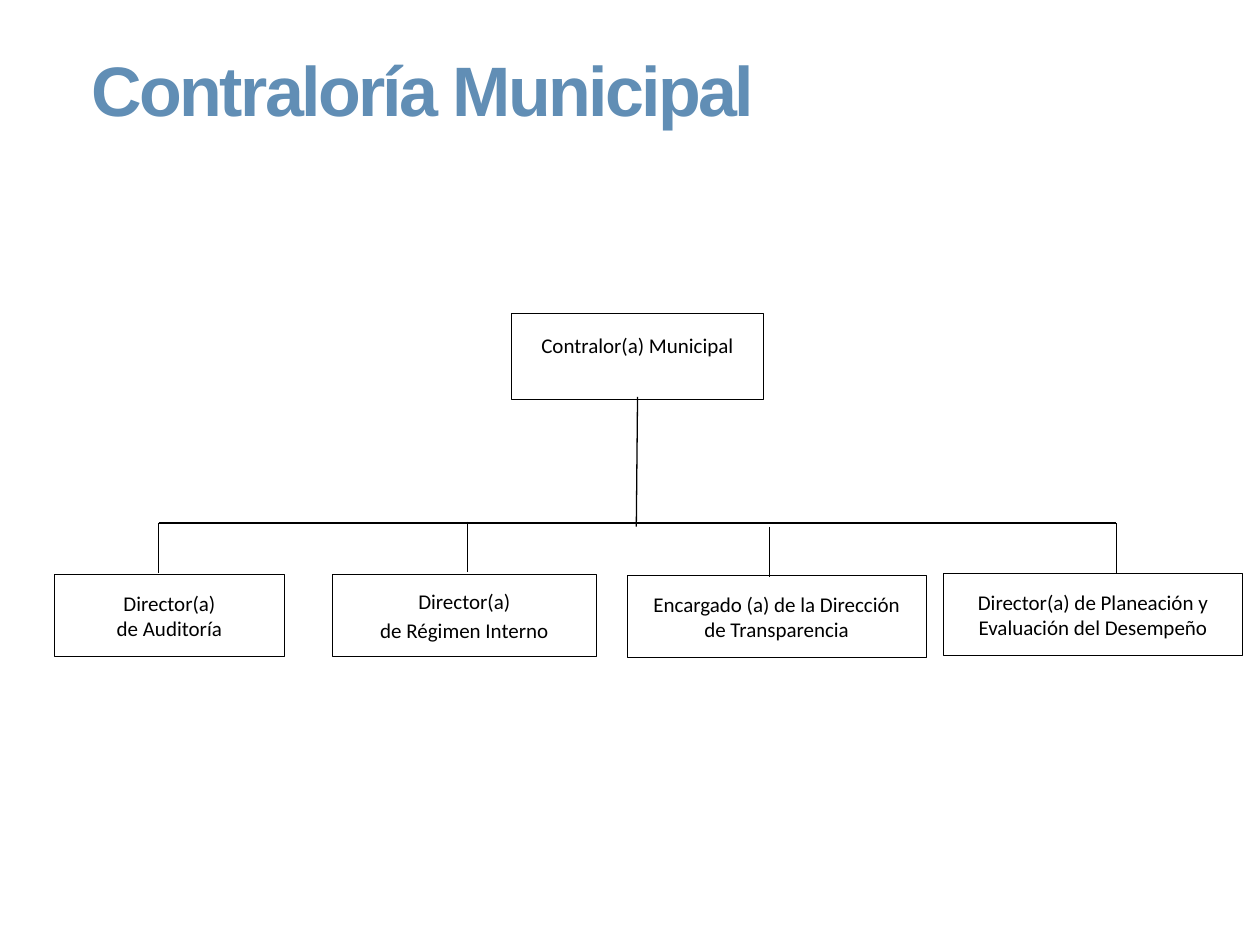
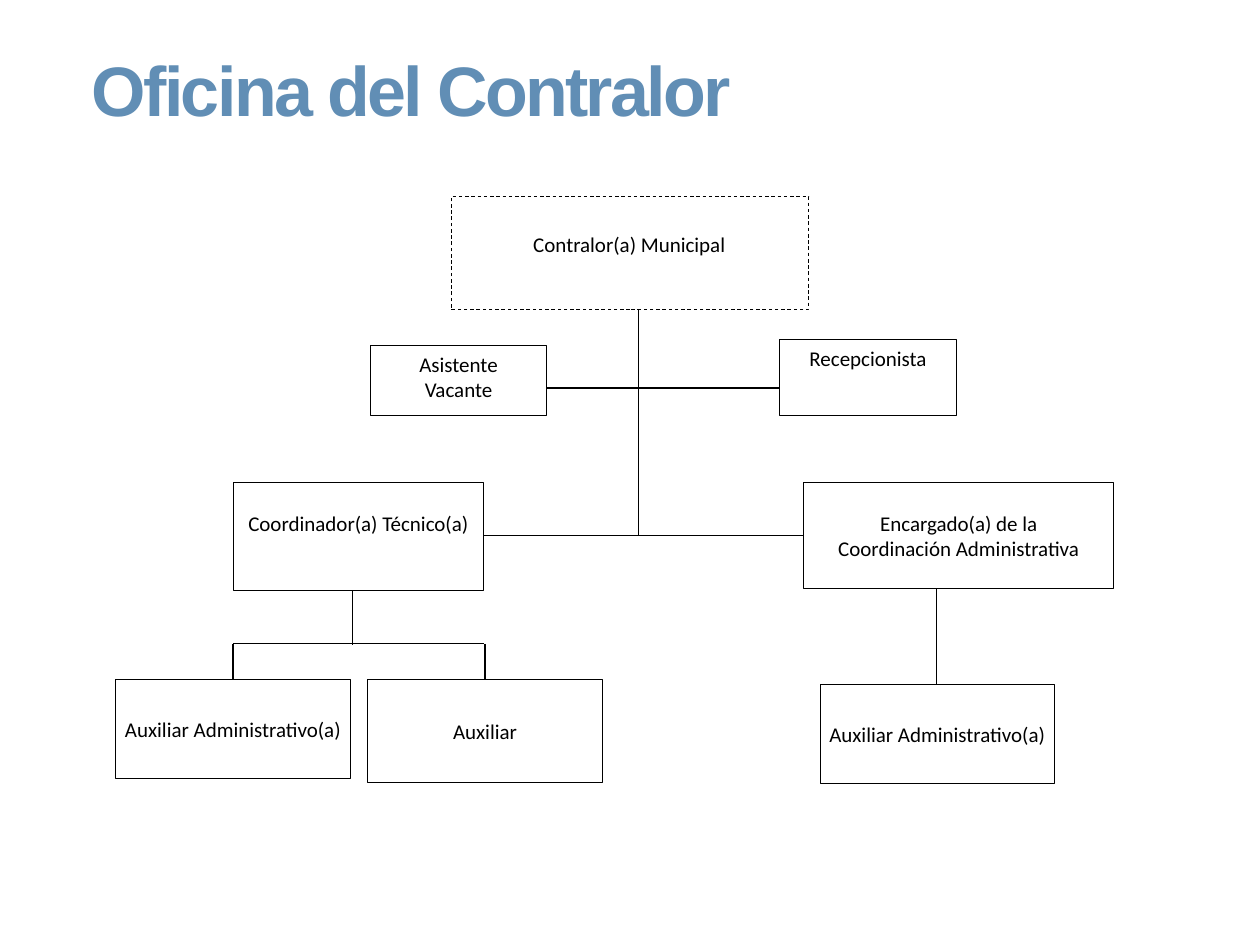
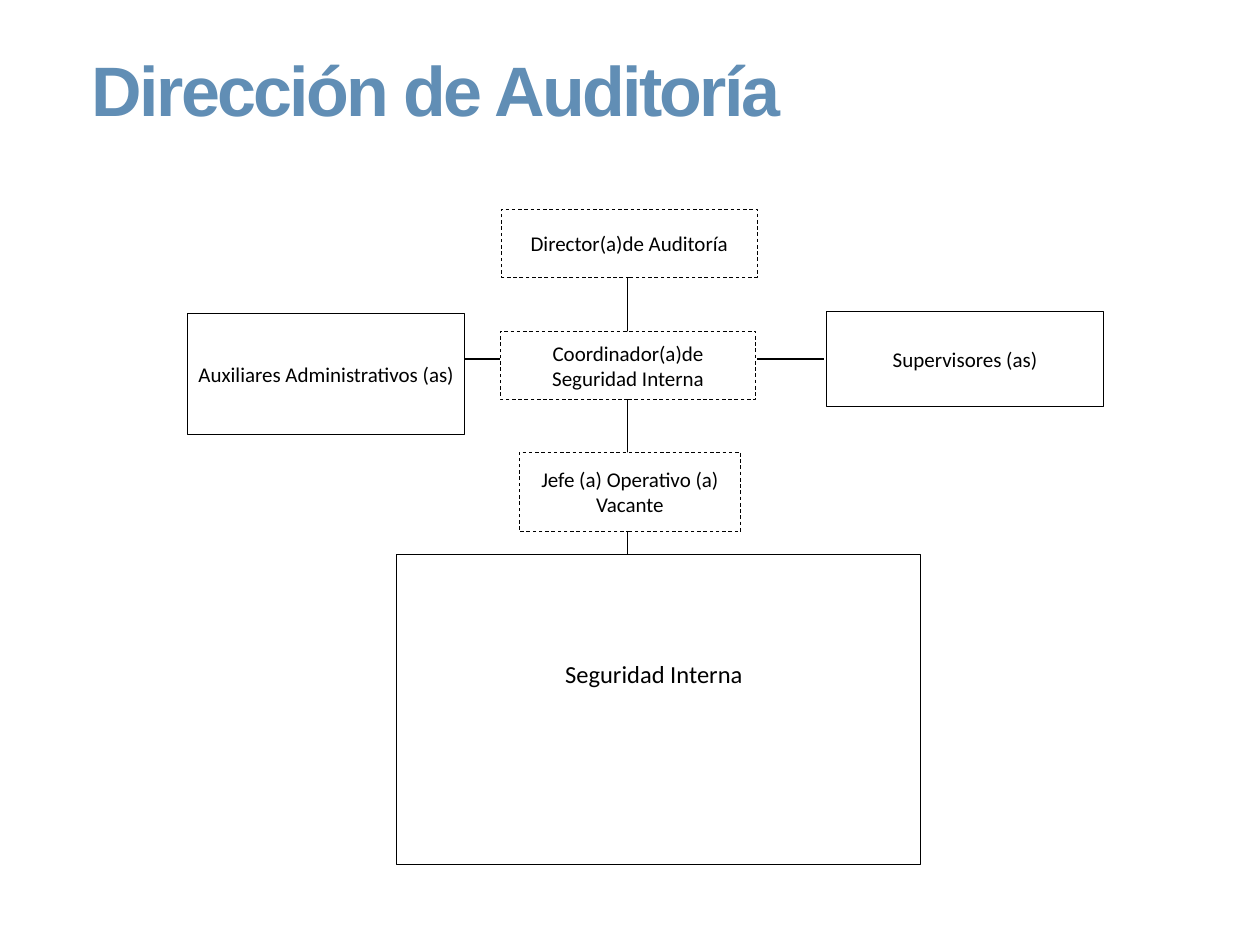
import dataclasses

import lxml.etree
import pptx
import pptx.dml.color
import pptx.enum.dml
import pptx.enum.shapes
import pptx.enum.text
import pptx.oxml.ns
import pptx.util

Inches = pptx.util.Inches
Pt = pptx.util.Pt
Anchor = pptx.enum.text.MSO_ANCHOR
Align = pptx.enum.text.PP_ALIGN


@dataclasses.dataclass(frozen=True)
class Theme:
    title_color: str = "618EB5"
    ink: str = "000000"
    paper: str = "FFFFFF"
    title_font: str = "Arial"
    body_font: str = "Calibri"
    title_size: float = 40
    title_spacing: float = -1.5
    body_size: float = 12
    large_size: float = 14
    border: float = 0.5
    link: float = 0.75


THEME = Theme()


def rgb(value):
    return pptx.dml.color.RGBColor.from_string(value)


def write_text(frame, text, *, size=THEME.body_size, font=THEME.body_font,
               color=THEME.ink, bold=False, align=Align.CENTER, spacing=0, gap=0):
    """Fill a text frame, one paragraph for each line of text."""
    for index, line in enumerate(text.split("\n")):
        para = frame.paragraphs[0] if index == 0 else frame.add_paragraph()
        para.alignment = align
        if index and gap:
            para.space_before = Pt(gap)
        span = para.add_run()
        span.text = line
        span.font.size = Pt(size)
        span.font.name = font
        span.font.bold = bold
        span.font.color.rgb = rgb(color)
        if spacing:
            span.font._element.set("spc", str(round(spacing * 100)))


class OrgChart:
    """Holds the deck, its theme and the current page."""

    def __init__(self, theme):
        self.theme = theme
        self.deck = pptx.Presentation()
        self.deck.slide_width = Inches(10)
        self.deck.slide_height = Inches(7.5)
        self.page = None

    def add_page(self, title):
        self.page = self.deck.slides.add_slide(self.deck.slide_layouts[6])
        theme = self.theme
        self.label(title, 0.63, 0.32, 5.82, 0.77, size=theme.title_size,
                   font=theme.title_font, color=theme.title_color, bold=True,
                   align=Align.LEFT, spacing=theme.title_spacing)

    def label(self, text, left, top, width, height, **style):
        box = self.page.shapes.add_textbox(
            Inches(left), Inches(top), Inches(width), Inches(height))
        box.text_frame.word_wrap = True
        box.text_frame.auto_size = pptx.enum.text.MSO_AUTO_SIZE.SHAPE_TO_FIT_TEXT
        write_text(box.text_frame, text, **style)

    def post(self, text, left, top, width, height, *, dashed=False, border=True,
             anchor=Anchor.MIDDLE, inset=0.05, **style):
        box = self.page.shapes.add_shape(
            pptx.enum.shapes.MSO_SHAPE.RECTANGLE,
            Inches(left), Inches(top), Inches(width), Inches(height))
        box.shadow.inherit = False
        box.fill.solid()
        box.fill.fore_color.rgb = rgb(self.theme.paper)
        if border:
            box.line.color.rgb = rgb(self.theme.ink)
            box.line.width = Pt(self.theme.border)
            if dashed:
                box.line.dash_style = pptx.enum.dml.MSO_LINE.DASH
        else:
            box.line.fill.background()
        if text:
            frame = box.text_frame
            frame.word_wrap = anchor == Anchor.TOP
            frame.vertical_anchor = anchor
            frame.margin_top = Inches(inset)
            write_text(frame, text, **style)

    def link(self, x1, y1, x2, y2):
        line = self.page.shapes.add_connector(
            pptx.enum.shapes.MSO_CONNECTOR.STRAIGHT,
            Inches(x1), Inches(y1), Inches(x2), Inches(y2))
        line.line.color.rgb = rgb(self.theme.ink)
        line.line.width = Pt(self.theme.link)
        lxml.etree.SubElement(line._element.spPr, pptx.oxml.ns.qn("a:effectLst"))

    def vertical(self, x, top, bottom):
        self.link(x, top, x, bottom)

    def horizontal(self, y, left, right):
        self.link(left, y, right, y)


def add_municipal_page(chart):
    chart.add_page("Contraloría Municipal")

    # Head of the office
    chart.post("", 4.06, 2.49, 2, 0.68)
    chart.label("Contralor(a) Municipal", 4.03, 2.59, 2.06, 0.3)

    # Trunk and the bar over the directors
    chart.link(5.06, 3.15, 5.05, 4.18)
    chart.horizontal(4.15, 1.26, 8.86)

    # Directors: text, left, top, width, drop position, drop start, line gap
    directors = [
        ("Director(a)\nde Auditoría", 0.43, 4.56, 1.83, 1.26, 4.15, 0),
        ("Director(a)\nde Régimen Interno", 2.64, 4.56, 2.09, 3.71, 4.14, 2.4),
        ("Encargado (a) de la Dirección\nde Transparencia",
         4.98, 4.57, 2.37, 6.11, 4.18, 0),
        ("Director(a) de Planeación y\nEvaluación del Desempeño",
         7.49, 4.55, 2.37, 8.86, 4.15, 0),
    ]
    for text, left, top, width, drop, start, gap in directors:
        chart.post(text, left, top, width, 0.65, gap=gap)
        chart.vertical(drop, start, start + 0.4)


def add_office_page(chart):
    chart.add_page("Oficina del Contralor")

    # Trunk and cross links
    chart.vertical(5.07, 2.16, 4.25)
    chart.horizontal(3.08, 4.34, 6.19)
    chart.horizontal(4.25, 3.84, 6.38)

    # Branches to the assistants
    chart.vertical(7.43, 4.67, 5.43)
    chart.vertical(2.8, 4.69, 5.12)
    chart.horizontal(5.11, 1.85, 3.84)
    for x in (1.85, 3.85):
        chart.vertical(x, 5.11, 5.43)

    # Head of the office and staff
    chart.post("", 3.58, 1.56, 2.84, 0.9, dashed=True)
    chart.label("Contralor(a) Municipal", 3.8, 1.79, 2.39, 0.3)
    chart.post("Asistente\nVacante", 2.94, 2.74, 1.4, 0.56, anchor=Anchor.TOP)
    chart.post("Recepcionista", 6.19, 2.69, 1.4, 0.61, anchor=Anchor.TOP)

    # Coordinators
    chart.post("Coordinador(a) Técnico(a)", 1.85, 3.83, 1.99, 0.86,
               anchor=Anchor.TOP, inset=0.22)
    chart.post("Encargado(a) de la\nCoordinación Administrativa",
               6.38, 3.83, 2.46, 0.84)

    # Assistants
    for text, left, top, height in [
        ("Auxiliar Administrativo(a)", 0.92, 5.39, 0.79),
        ("Auxiliar", 2.92, 5.39, 0.82),
        ("Auxiliar Administrativo(a)", 6.51, 5.43, 0.79),
    ]:
        chart.post(text, left, top, 1.86, height)


def add_audit_page(chart):
    chart.add_page("Dirección de Auditoría")

    # Trunk and side links
    chart.vertical(4.98, 2.21, 3.99)
    chart.vertical(4.98, 4.01, 4.8)
    chart.horizontal(2.85, 3.69, 3.97)
    chart.horizontal(2.85, 6.01, 6.54)

    # Chain of command
    for text, left, top, width, height in [
        ("Director(a)de Auditoría", 3.98, 1.66, 2.03, 0.54),
        ("Coordinador(a)de\nSeguridad Interna", 3.97, 2.63, 2.03, 0.54),
        ("Jefe (a) Operativo (a)\nVacante", 4.12, 3.59, 1.76, 0.63),
    ]:
        chart.post(text, left, top, width, height, dashed=True)

    # Support staff
    chart.post("Auxiliares Administrativos (as)", 1.49, 2.49, 2.2, 0.96)
    chart.post("Supervisores (as)", 6.56, 2.47, 2.2, 0.76)

    # Internal security
    chart.post("", 3.15, 4.4, 4.16, 2.46)
    chart.post("Seguridad Interna", 3.54, 5.27, 3.3, 0.16, border=False,
               size=chart.theme.large_size)


def main():
    chart = OrgChart(THEME)
    add_municipal_page(chart)
    add_office_page(chart)
    add_audit_page(chart)
    chart.deck.save("out.pptx")


if __name__ == "__main__":
    main()
